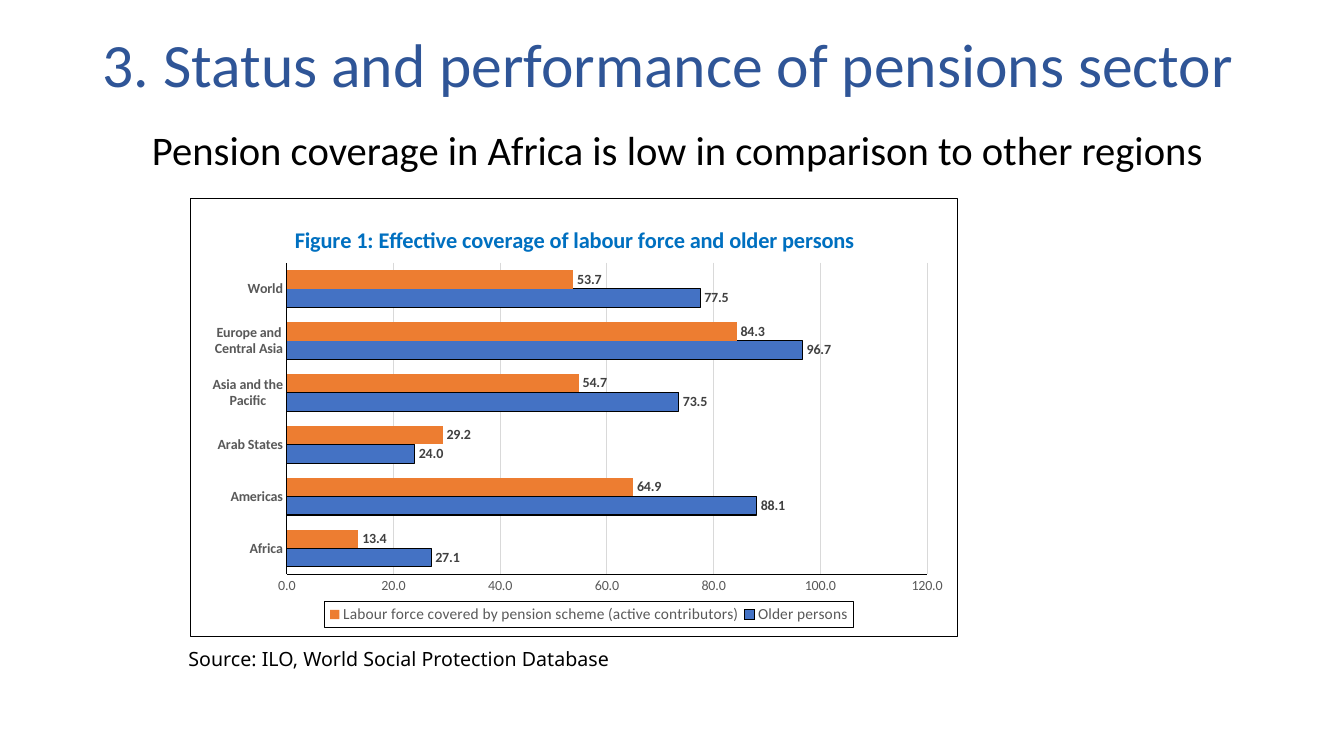
from lxml import etree
from pptx import Presentation
from pptx.chart.data import CategoryChartData
from pptx.dml.color import RGBColor
from pptx.enum.chart import XL_CHART_TYPE as ChartType
from pptx.enum.chart import XL_LABEL_POSITION as LabelPosition
from pptx.enum.chart import XL_LEGEND_POSITION as LegendPosition
from pptx.enum.chart import XL_TICK_MARK as TickMark
from pptx.enum.text import MSO_ANCHOR as Anchor
from pptx.oxml import parse_xml
from pptx.oxml.ns import nsdecls, qn
from pptx.util import Cm, Pt

BLACK = RGBColor(0x00, 0x00, 0x00)
NAVY = RGBColor(0x2F, 0x55, 0x97)
TITLE_BLUE = RGBColor(0x00, 0x70, 0xC0)
BAR_BLUE = RGBColor(0x44, 0x72, 0xC4)
BAR_ORANGE = RGBColor(0xED, 0x7D, 0x31)
AXIS_GREY = RGBColor(0x59, 0x59, 0x59)
LABEL_GREY = RGBColor(0x40, 0x40, 0x40)
GRID_GREY = RGBColor(0xD9, 0xD9, 0xD9)
BODY_FONT = "Calibri"
THIN = Pt(0.75)

# Content: text, box in cm, font, size, colour, line spacing, space before, anchor
TEXTS = [
    ("3. Status and performance of pensions sector",
     (2.34, 0.46, 29.21, 2.49), BODY_FONT, 44, NAVY, 0.9, 0, Anchor.MIDDLE),
    ("Pension coverage in Africa is low in comparison to other regions",
     (3.58, 2.57, 29.21, 2.21), BODY_FONT, 29, BLACK, 1.14, 6, Anchor.MIDDLE),
    ("Source: ILO, World Social Protection Database",
     (4.5, 16.18, 21.0, 0.86), "Noto Sans", 14, BLACK, 1.0, 0, Anchor.TOP),
]
FIGURE_TITLE = "Figure 1: Effective coverage of labour force and older persons"
FIGURE_BOX = (4.8, 5.0, 19.35, 11.05)
REGIONS = ["Africa", "Americas", "Arab States", "Asia and the Pacific",
           "Europe and Central Asia", "World"]
# Series: name, values, fill, outline
COVERAGE = [
    ("Older persons", (27.1, 88.1, 24.0, 73.5, 96.7, 77.5), BAR_BLUE, BLACK),
    ("Labour force covered by pension scheme (active contributors)",
     (13.4, 64.9, 29.2, 54.7, 84.3, 53.7), BAR_ORANGE, None),
]


def style(font, size, color, bold=False, name=BODY_FONT):
    font.name, font.size, font.bold = name, Pt(size), bold
    font.color.rgb = color


def outline(line, color):
    line.color.rgb = color
    line.width = THIN


def frame(element):
    """Give a chart part a thin black border."""
    border = parse_xml(
        f'<c:spPr {nsdecls("c", "a")}><a:noFill/><a:ln w="{int(THIN)}">'
        f'<a:solidFill><a:srgbClr val="{BLACK}"/></a:solidFill></a:ln></c:spPr>')
    element.find(qn("c:txPr")).addprevious(border)


def place(element, index, **fractions):
    """Set a manual layout in fractions of the chart's size."""
    for old in element.findall(qn("c:layout")):
        element.remove(old)
    layout = parse_xml(f'<c:layout {nsdecls("c")}><c:manualLayout/></c:layout>')
    settings = {"xMode": "edge", "yMode": "edge", **fractions}
    if element.tag == qn("c:plotArea"):
        settings = {"layoutTarget": "inner", **settings}
    for key, value in settings.items():
        etree.SubElement(layout[0], qn(f"c:{key}")).set("val", str(value))
    element.insert(index, layout)


prs = Presentation()
prs.slide_width, prs.slide_height = Cm(33.87), Cm(19.05)
slide = prs.slides.add_slide(prs.slide_layouts[6])

# Heading, subtitle and source
for text, box, font_name, size, color, spacing, before, anchor in TEXTS:
    frame_text = slide.shapes.add_textbox(*map(Cm, box)).text_frame
    frame_text.word_wrap = True
    frame_text.vertical_anchor = anchor
    frame_text.text = text
    paragraph = frame_text.paragraphs[0]
    paragraph.line_spacing = spacing
    paragraph.space_before = Pt(before)
    style(paragraph.runs[0].font, size, color, name=font_name)

# Coverage chart
data = CategoryChartData(number_format="0.0")
data.categories = REGIONS
for name, values, *_ in COVERAGE:
    data.add_series(name, values)
chart = slide.shapes.add_chart(
    ChartType.BAR_CLUSTERED, *map(Cm, FIGURE_BOX), data).chart
style(chart.font, 10, BLACK)
frame(chart.element)

chart.has_title = True
figure_title = chart.chart_title.text_frame
figure_title.text = FIGURE_TITLE
style(figure_title.paragraphs[0].runs[0].font, 16, TITLE_BLUE, bold=True)

# Bars and value labels
bars = chart.plots[0]
bars.gap_width, bars.overlap = 78, 0
bars.vary_by_categories = False
for series, (_, _, fill, edge) in zip(bars.series, COVERAGE):
    series.format.fill.solid()
    series.format.fill.fore_color.rgb = fill
    if edge is None:
        series.format.line.fill.background()
    else:
        outline(series.format.line, edge)
    labels = series.data_labels
    labels.show_value = True
    labels.number_format, labels.number_format_is_linked = "0.0", False
    labels.position = LabelPosition.OUTSIDE_END
    style(labels.font, 10, LABEL_GREY, bold=True)

# Axes
regions_axis, percent_axis = chart.category_axis, chart.value_axis
for axis, bold in ((regions_axis, True), (percent_axis, False)):
    axis.major_tick_mark = axis.minor_tick_mark = TickMark.NONE
    outline(axis.format.line, BLACK)
    style(axis.tick_labels.font, 10, AXIS_GREY, bold=bold)
percent_axis.minimum_scale, percent_axis.maximum_scale = 0, 120
percent_axis.major_unit = 20
percent_axis.tick_labels.number_format = "0.0"
percent_axis.tick_labels.number_format_is_linked = False
percent_axis.has_major_gridlines = True
outline(percent_axis.major_gridlines.format.line, GRID_GREY)

# Legend
chart.has_legend = True
legend = chart.legend
legend.position = LegendPosition.BOTTOM
legend.include_in_layout = False
style(legend.font, 11, AXIS_GREY)

# Positions inside the chart
chart_part = chart.element.find(qn("c:chart"))
legend_part = chart_part.find(qn("c:legend"))
frame(legend_part)
place(chart_part.find(qn("c:title")), 1, x=0.13, y=0.05)
place(chart_part.find(qn("c:plotArea")), 0, x=0.125, y=0.146, w=0.835, h=0.712)
place(legend_part, 1, x=0.174, y=0.92, w=0.69, h=0.06)

prs.save("out.pptx")
